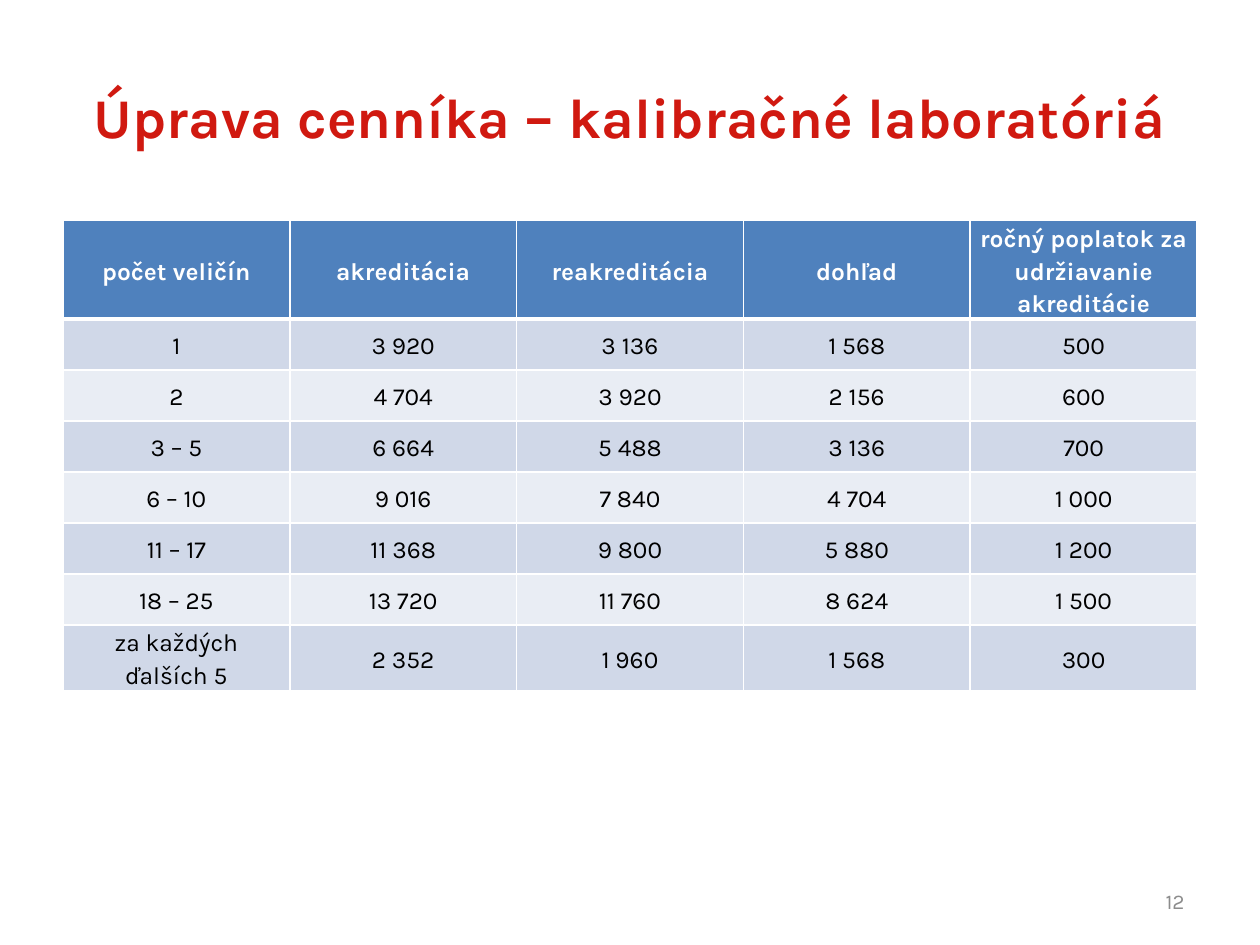
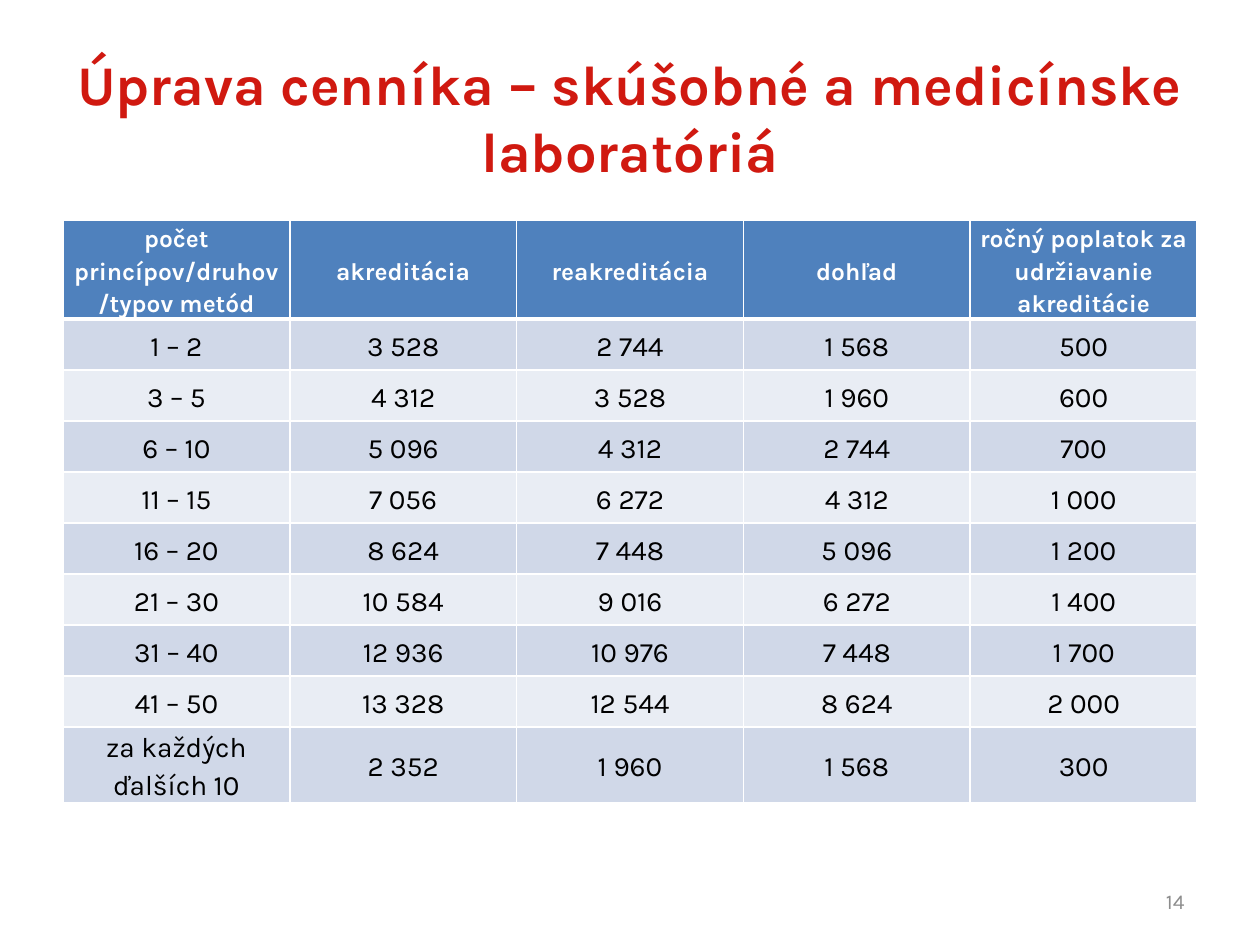
from dataclasses import dataclass

from lxml import etree
from pptx import Presentation
from pptx.dml.color import RGBColor
from pptx.enum.text import MSO_ANCHOR, PP_ALIGN
from pptx.oxml.ns import qn
from pptx.util import Inches, Pt

CENTER, RIGHT = PP_ALIGN.CENTER, PP_ALIGN.RIGHT
MIDDLE = MSO_ANCHOR.MIDDLE
TITLE_ONLY = 5
WIDTH, HEIGHT = Inches(10), Inches(7.5)
MARGIN = int(WIDTH * 0.05)
CONTENT = WIDTH - 2 * MARGIN


@dataclass(frozen=True)
class Theme:
    """Fonts, colours and type sizes shared by the slides."""
    font: str = "Karla"
    title: str = "D01910"
    header: str = "4F81BD"
    bands: tuple = ("D0D8E8", "E9EDF4")
    white: str = "FFFFFF"
    black: str = "000000"
    grey: str = "8C8C8C"
    title_size: int = 32
    header_size: int = 14
    number_size: int = 12
    rule: int = 1
    header_rule: int = 3


THEME = Theme()
FEES = ["akreditácia", "reakreditácia", "dohľad",
        "ročný poplatok za udržiavanie akreditácie"]

CALIBRATION = [
    ["počet veličín", *FEES],
    ["1", "3 920", "3 136", "1 568", "500"],
    ["2", "4 704", "3 920", "2 156", "600"],
    ["3 – 5", "6 664", "5 488", "3 136", "700"],
    ["6 – 10", "9 016", "7 840", "4 704", "1 000"],
    ["11 – 17", "11 368", "9 800", "5 880", "1 200"],
    ["18 – 25", "13 720", "11 760", "8 624", "1 500"],
    ["za každých ďalších 5", "2 352", "1 960", "1 568", "300"],
]

TESTING = [
    ["počet princípov/druhov/typov metód", *FEES],
    ["1 – 2", "3 528", "2 744", "1 568", "500"],
    ["3 – 5", "4 312", "3 528", "1 960", "600"],
    ["6 – 10", "5 096", "4 312", "2 744", "700"],
    ["11 – 15", "7 056", "6 272", "4 312", "1 000"],
    ["16 – 20", "8 624", "7 448", "5 096", "1 200"],
    ["21 – 30", "10 584", "9 016", "6 272", "1 400"],
    ["31 – 40", "12 936", "10 976", "7 448", "1 700"],
    ["41 – 50", "13 328", "12 544", "8 624", "2 000"],
    ["za každých ďalších 10", "2 352", "1 960", "1 568", "300"],
]


def write(tf, text, size, color, align, bold=False):
    """Write one formatted run into the first paragraph and return it."""
    p = tf.paragraphs[0]
    p.alignment = align
    r = p.add_run()
    r.text = text
    r.font.name = THEME.font
    r.font.size = Pt(size)
    r.font.bold = bold
    r.font.color.rgb = RGBColor.from_string(color)
    return p


def place(sp, left, top, width, height):
    """Set the position and size of a shape."""
    sp.left, sp.top, sp.width, sp.height = left, top, width, height


def add_title(s, text):
    """Format and fill the title placeholder."""
    sp = s.shapes.title
    place(sp, MARGIN, int(HEIGHT * 0.04), CONTENT, Inches(1.25))
    tf = sp.text_frame
    tf.word_wrap = True
    tf.vertical_anchor = MIDDLE
    write(tf, text, THEME.title_size, THEME.title, CENTER, bold=True)


def add_number(s, number):
    """Add the slide number at the bottom right."""
    width = Inches(2.33)
    sp = s.shapes.add_textbox(WIDTH - MARGIN - width, Inches(6.95),
                              width, Inches(0.4))
    tf = sp.text_frame
    tf.word_wrap = True
    tf.vertical_anchor = MIDDLE
    write(tf, str(number), THEME.number_size, THEME.grey, RIGHT)


def set_borders(cell, top, bottom):
    """Draw white rules around a cell."""
    tc_pr = cell._tc.get_or_add_tcPr()
    widths = {"a:lnL": THEME.rule, "a:lnR": THEME.rule,
              "a:lnT": top, "a:lnB": bottom}
    for tag, width in widths.items():
        ln = etree.SubElement(tc_pr, qn(tag), w=str(Pt(width)))
        fill = etree.SubElement(ln, qn("a:solidFill"))
        etree.SubElement(fill, qn("a:srgbClr"), val=THEME.white)


def fill_cell(cell, text, row, body_size):
    """Write and format a header or banded body cell."""
    header = row == 0
    set_borders(cell, THEME.header_rule if row == 1 else THEME.rule,
                THEME.header_rule if header else THEME.rule)
    cell.fill.solid()
    color = THEME.header if header else THEME.bands[(row - 1) % 2]
    cell.fill.fore_color.rgb = RGBColor.from_string(color)
    cell.vertical_anchor = MIDDLE
    cell.margin_left = cell.margin_right = Inches(0.07)
    cell.margin_top = cell.margin_bottom = 0
    p = write(cell.text_frame, text,
              THEME.header_size if header else body_size,
              THEME.white if header else THEME.black, CENTER, bold=header)
    p.line_spacing = 1.15
    p.space_after = Pt(10)


def add_price_table(s, rows, body_size):
    """Add the price table with equal columns and rows."""
    row_height = Pt(29.15)
    frame = s.shapes.add_table(len(rows), len(rows[0]), MARGIN, Inches(1.75),
                               CONTENT, row_height * len(rows))
    for i, values in enumerate(rows):
        frame.table.rows[i].height = row_height
        for j, text in enumerate(values):
            fill_cell(frame.table.cell(i, j), text, i, body_size)


def add_price_slide(prs, title, rows, body_size, number):
    """Add one price list slide."""
    s = prs.slides.add_slide(prs.slide_layouts[TITLE_ONLY])
    add_title(s, title)
    add_price_table(s, rows, body_size)
    add_number(s, number)


def main():
    """Build and save the presentation."""
    prs = Presentation()
    prs.slide_width, prs.slide_height = WIDTH, HEIGHT
    add_price_slide(prs, "Úprava cenníka – kalibračné laboratóriá",
                    CALIBRATION, 14, 12)
    add_price_slide(prs, "Úprava cenníka – skúšobné a medicínske laboratóriá",
                    TESTING, 16, 14)
    prs.save("out.pptx")


if __name__ == "__main__":
    main()
